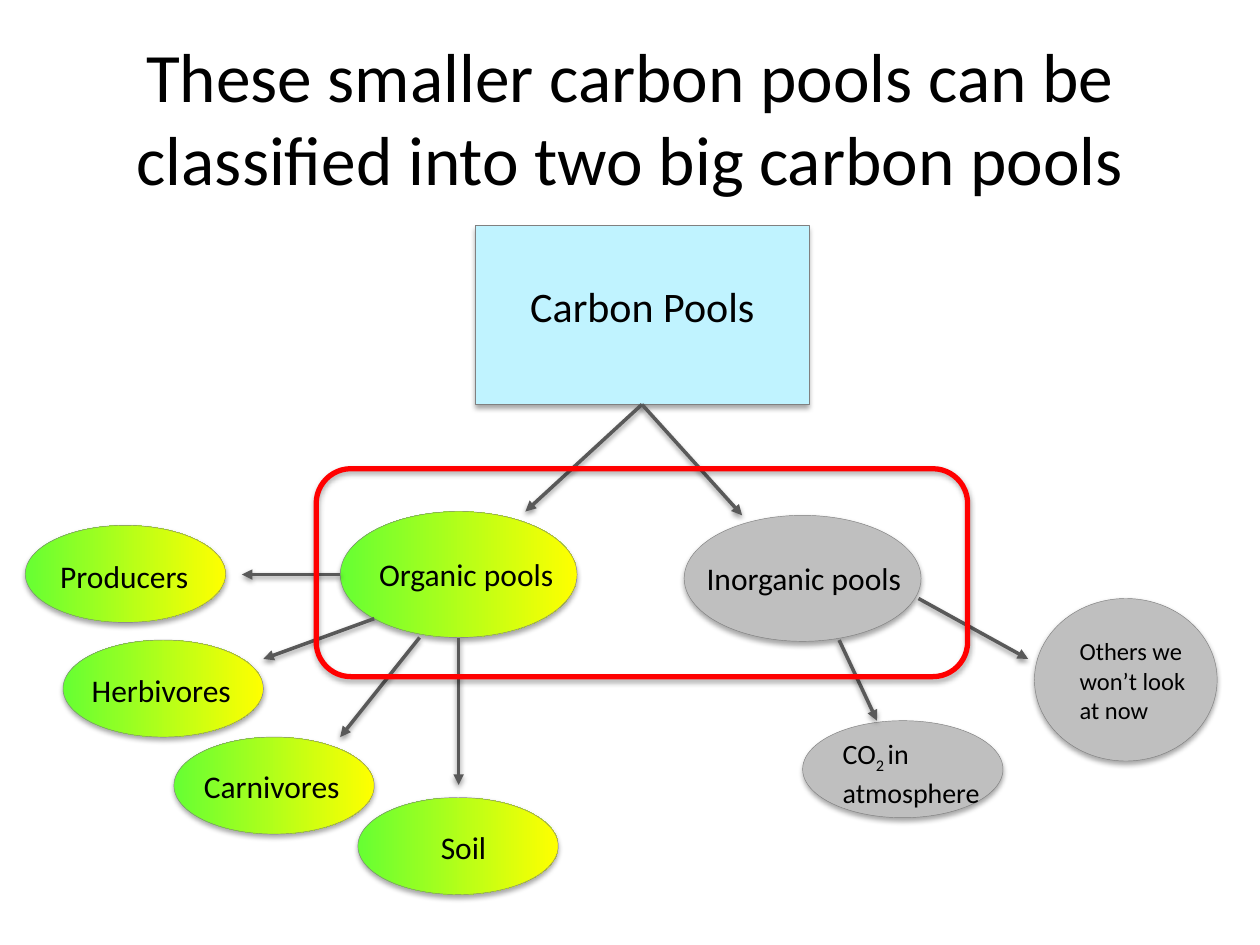
"""Build a slide that sorts carbon pools into organic and inorganic groups."""
from dataclasses import dataclass

from lxml.etree import SubElement
from pptx import Presentation
from pptx.dml.color import RGBColor as Color
from pptx.enum.shapes import MSO_CONNECTOR as Connector, MSO_SHAPE as Shape
from pptx.enum.text import MSO_ANCHOR as Anchor, MSO_AUTO_SIZE as AutoSize, PP_ALIGN as Align
from pptx.oxml.ns import qn
from pptx.util import Inches, Pt


@dataclass(frozen=True)
class Theme:
    font: str = "Calibri"
    text: str = "000000"
    sky: str = "C0F3FF"
    gray: str = "BFBFBF"
    green: str = "66FF33"
    yellow: str = "FFFF00"
    outline: str = "808080"
    arrow: str = "595959"
    highlight: str = "FF0000"
    title_size: float = 39.6
    root_size: int = 24
    label_size: int = 18
    gas_size: int = 16
    note_size: int = 14


theme = Theme()


def write(para, text, size, baseline=None):
    span = para.add_run()
    span.text = text
    span.font.name = theme.font
    span.font.size = Pt(size)
    span.font.color.rgb = Color.from_string(theme.text)
    if baseline:
        span.font._element.set("baseline", str(baseline * 1000))


def style_edge(item, color, width, opacity=35, distance=1.8):
    item.line.color.rgb = Color.from_string(color)
    item.line.width = Pt(width)
    effects = SubElement(item._element.spPr, qn("a:effectLst"))
    shadow = SubElement(effects, qn("a:outerShdw"), blurRad=str(Pt(3.1)),
                        dist=str(Pt(distance)), dir="5400000", rotWithShape="0")
    tint = SubElement(shadow, qn("a:srgbClr"), val="000000")
    SubElement(tint, qn("a:alpha"), val=str(opacity * 1000))


deck = Presentation()
deck.slide_width, deck.slide_height = Inches(10), Inches(7.5)
page = deck.slides.add_slide(deck.slide_layouts[5])

title = page.shapes.title
title.left, title.top, title.width, title.height = map(Inches, (0.5, 0.3, 9, 1.25))
title.text_frame.vertical_anchor = Anchor.MIDDLE
title.text_frame.auto_size = AutoSize.NONE
title.text_frame.paragraphs[0].alignment = Align.CENTER
write(title.text_frame.paragraphs[0],
      "These smaller carbon pools can be classified into two big carbon pools", theme.title_size)

root = page.shapes.add_shape(Shape.RECTANGLE, *map(Inches, (3.77, 1.79, 2.65, 1.42)))
root.fill.solid()
root.fill.fore_color.rgb = Color.from_string(theme.sky)
style_edge(root, theme.outline, 0.25)

group_size, member_size = (1.88, 1), (1.59, 0.77)
pools = [
    (2.7, 4.06, group_size, True),
    (0.5, 5.08, member_size, True),
    (5.43, 4.09, group_size, False),
    (0.2, 4.17, member_size, True),
    (1.38, 5.85, member_size, True),
    (2.84, 6.33, member_size, True),
    (6.37, 5.72, member_size, False),
    (8.21, 4.75, (1.45, 1.29), False),
]
for left, top, size, organic in pools:
    pool = page.shapes.add_shape(Shape.OVAL, *map(Inches, (left, top, *size)))
    if organic:
        pool.fill.gradient()
        pool.fill.gradient_angle = 0
        for stop, color in zip(pool.fill.gradient_stops, (theme.green, theme.yellow)):
            stop.color.rgb = Color.from_string(color)
    else:
        pool.fill.solid()
        pool.fill.fore_color.rgb = Color.from_string(theme.gray)
    style_edge(pool, theme.outline, 0.25)

root_bottom = (5.1, 3.21)
arrows = [
    (root_bottom, (4.17, 4.06)),
    (root_bottom, (5.89, 4.09)),
    ((2.7, 4.56), (1.92, 4.56)),
    ((2.97, 4.91), (2.09, 5.23)),
    ((3.33, 5.06), (2.7, 5.85)),
    ((3.64, 5.06), (3.64, 6.23)),
    ((6.66, 5.08), (6.96, 5.72)),
    ((7.29, 4.75), (8.16, 5.23)),
]
for start, end in arrows:
    arrow = page.shapes.add_connector(Connector.STRAIGHT, *map(Inches, (*start, *end)))
    if start == root_bottom:
        arrow.begin_connect(root, 2)
    style_edge(arrow, theme.arrow, 2, opacity=38, distance=1.6)
    SubElement(arrow.line._get_or_add_ln(), qn("a:tailEnd"), type="triangle")

labels = [
    (4.11, 2.18, 2.02, 0.5, theme.root_size, [("Carbon Pools", None)]),
    (2.91, 4.36, 1.62, 0.4, theme.label_size, [("Organic pools", None)]),
    (0.38, 4.37, 1.4, 0.4, theme.label_size, [("Producers", None)]),
    (0.63, 5.28, 1.34, 0.4, theme.label_size, [("Herbivores", None)]),
    (1.52, 6.04, 1.33, 0.4, theme.label_size, [("Carnivores", None)]),
    (3.4, 6.52, 0.63, 0.4, theme.label_size, [("Soil", None)]),
    (5.51, 4.39, 1.86, 0.4, theme.label_size, [("Inorganic pools", None)]),
    (6.59, 5.8, 1.5, 0.64, theme.gas_size, [("CO", None), ("2 ", -25), ("in atmosphere", None)]),
    (8.47, 5, 1.21, 0.81, theme.note_size, [("Others we won’t look at now", None)]),
]
for left, top, width, height, size, spans in labels:
    box = page.shapes.add_textbox(*map(Inches, (left, top, width, height)))
    box.text_frame.word_wrap = True
    box.text_frame.auto_size = AutoSize.SHAPE_TO_FIT_TEXT
    for text, baseline in spans:
        write(box.text_frame.paragraphs[0], text, size, baseline=baseline)

frame = page.shapes.add_shape(Shape.ROUNDED_RECTANGLE, *map(Inches, (2.51, 3.72, 5.17, 1.65)))
frame.fill.background()
style_edge(frame, theme.highlight, 3)

deck.save("out.pptx")
